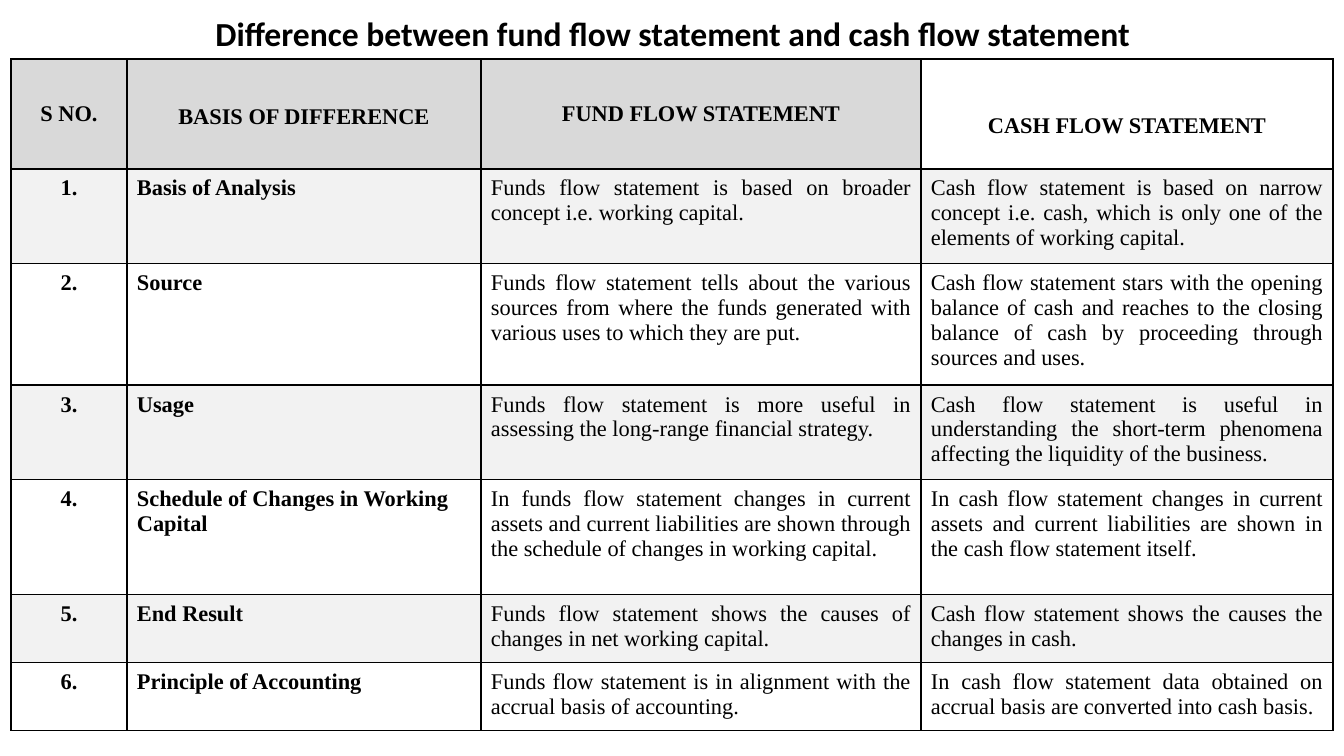
from lxml import etree
from pptx import Presentation
from pptx import util as u
from pptx.dml.color import RGBColor
from pptx.enum import shapes, text
from pptx.oxml import ns

PX = 9071.43  # EMU per px, 100.8 px to the inch
THEME = {
    "ink": RGBColor.from_string("000000"),
    "header": RGBColor.from_string("D9D9D9"),
    "bands": [RGBColor.from_string("F2F2F2"), RGBColor.from_string("FFFFFF")],
    "title_font": "Calibri",
    "table_font": "Times New Roman",
    "title_size": u.Pt(24),
    "table_size": u.Pt(16),
    "border": u.Pt(1),
    "edge": u.Pt(0.5),
}
COLUMNS = [116, 354, 440, 412]
ROWS = [110, 90, 115, 89, 115, 64, 64]
HEADER_DROP = [0, 3, 0, 12]  # px each heading sits below the middle of its cell
LEFT, TOP = 11, 59
INSET_X, INSET_Y = 10, 7

HEADINGS = ["S NO.", "BASIS OF DIFFERENCE", "FUND FLOW STATEMENT", "CASH FLOW STATEMENT"]
DIFFERENCES = [
    ("Basis of Analysis",
     "Funds flow statement is based on broader concept i.e. working capital.",
     "Cash flow statement is based on narrow concept i.e. cash, which is only one of "
     "the elements of working capital."),
    ("Source",
     "Funds flow statement tells about the various sources from where the funds "
     "generated with various uses to which they are put.",
     "Cash flow statement stars with the opening balance of cash and reaches to the "
     "closing balance of cash by proceeding through sources and uses."),
    ("Usage",
     "Funds flow statement is more useful in assessing the long-range financial strategy.",
     "Cash flow statement is useful in understanding the short-term phenomena "
     "affecting the liquidity of the business."),
    ("Schedule of Changes in Working Capital",
     "In funds flow statement changes in current assets and current liabilities are "
     "shown through the schedule of changes in working capital.",
     "In cash flow statement changes in current assets and current liabilities are "
     "shown in the cash flow statement itself."),
    ("End Result",
     "Funds flow statement shows the causes of changes in net working capital.",
     "Cash flow statement shows the causes the changes in cash."),
    ("Principle of Accounting",
     "Funds flow statement is in alignment with the accrual basis of accounting.",
     "In cash flow statement data obtained on accrual basis are converted into cash basis."),
]


def px(length):
    return u.Emu(round(length * PX))


def add_borders(cell):
    properties = cell._tc.get_or_add_tcPr()
    for side in ("lnL", "lnR", "lnT", "lnB"):
        line = etree.SubElement(properties, ns.qn(f"a:{side}"), w=str(THEME["border"]))
        fill = etree.SubElement(line, ns.qn("a:solidFill"))
        etree.SubElement(fill, ns.qn("a:srgbClr"), val=str(THEME["ink"]))


deck = Presentation()
deck.slide_width, deck.slide_height = px(1344), px(756)
page = deck.slides.add_slide(deck.slide_layouts[6])

# Title
box = page.shapes.add_textbox(px(58), px(-16), px(1237), px(75))
frame = box.text_frame
frame.word_wrap = True
frame.vertical_anchor = text.MSO_ANCHOR.BOTTOM
frame.text = "Difference between fund flow statement and cash flow statement "
para = frame.paragraphs[0]
para.alignment = text.PP_ALIGN.CENTER
para.line_spacing = 0.9
font = para.runs[0].font
font.name, font.size, font.bold = THEME["title_font"], THEME["title_size"], True
font.color.rgb = THEME["ink"]

# Comparison table
table = page.shapes.add_table(
    len(ROWS), len(COLUMNS), px(LEFT), px(TOP), px(sum(COLUMNS)), px(sum(ROWS))
).table
table.first_row = table.horz_banding = False
for column, width in zip(table.columns, COLUMNS):
    column.width = px(width)
for row, height in zip(table.rows, ROWS):
    row.height = px(height)

contents = [HEADINGS]
contents += [(f"{number}.", *entry) for number, entry in enumerate(DIFFERENCES, 1)]
body_alignment = [text.PP_ALIGN.CENTER, text.PP_ALIGN.LEFT,
                  text.PP_ALIGN.JUSTIFY, text.PP_ALIGN.JUSTIFY]

for r, entries in enumerate(contents):
    is_header = r == 0
    for c, words in enumerate(entries):
        cell = table.cell(r, c)
        add_borders(cell)
        if is_header and c == len(COLUMNS) - 1:
            cell.fill.background()
        else:
            cell.fill.solid()
            cell.fill.fore_color.rgb = THEME["header"] if is_header else THEME["bands"][(r - 1) % 2]
        drop = HEADER_DROP[c] if is_header else 0
        cell.margin_left = cell.margin_right = px(INSET_X)
        cell.margin_top, cell.margin_bottom = px(INSET_Y + 2 * drop), px(INSET_Y)
        cell.vertical_anchor = text.MSO_ANCHOR.MIDDLE if is_header else text.MSO_ANCHOR.TOP
        cell.text_frame.text = words
        para = cell.text_frame.paragraphs[0]
        para.alignment = text.PP_ALIGN.CENTER if is_header else body_alignment[c]
        font = para.runs[0].font
        font.name, font.size = THEME["table_font"], THEME["table_size"]
        font.bold = is_header or c < 2
        font.color.rgb = THEME["ink"]

# Left edge beside the header
edge = page.shapes.add_connector(
    shapes.MSO_CONNECTOR.STRAIGHT, px(LEFT), px(TOP), px(LEFT), px(TOP + 114)
)
edge.line.color.rgb = THEME["ink"]
edge.line.width = THEME["edge"]
etree.SubElement(edge._element.spPr, ns.qn("a:effectLst"))

deck.save("out.pptx")
